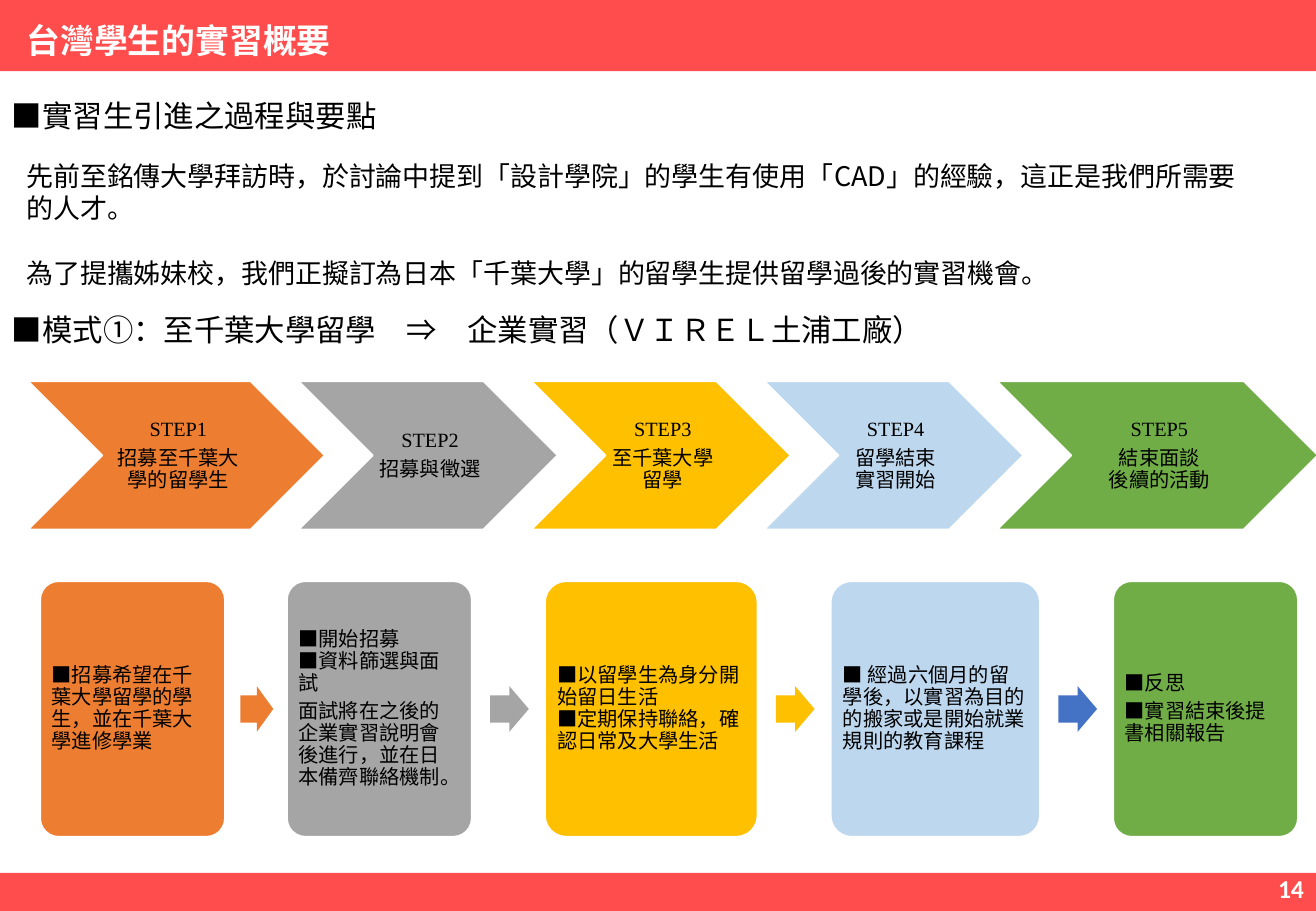
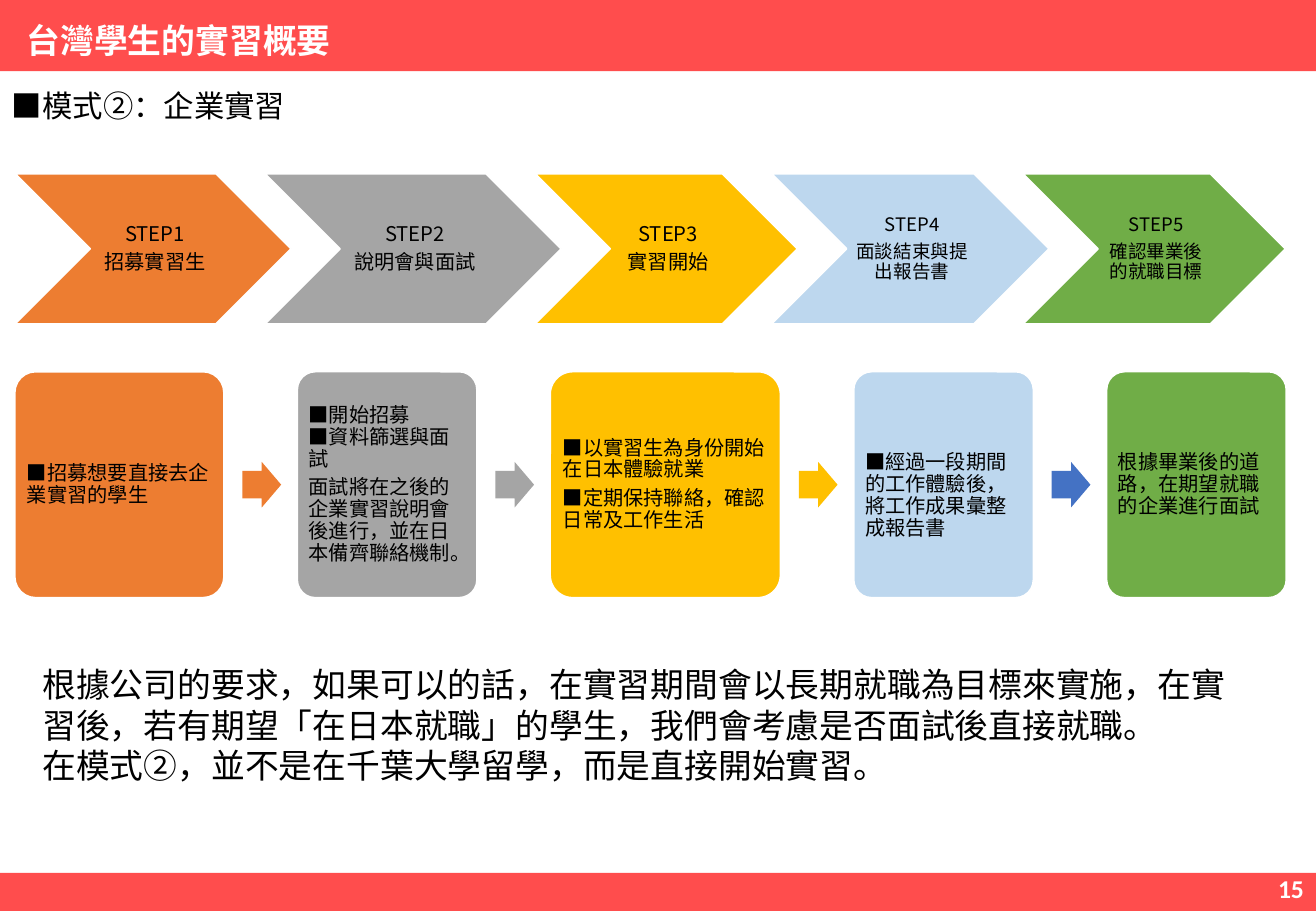
from dataclasses import dataclass
from typing import Any, NamedTuple

from lxml import etree
from pptx import Presentation
from pptx.dml.color import RGBColor
from pptx.enum.shapes import MSO_SHAPE
from pptx.enum.text import MSO_ANCHOR, PP_ALIGN
from pptx.oxml.ns import qn
from pptx.util import Pt

RECT, ROUND = MSO_SHAPE.RECTANGLE, MSO_SHAPE.ROUNDED_RECTANGLE
CHEVRON, ARROW = MSO_SHAPE.CHEVRON, MSO_SHAPE.RIGHT_ARROW
TOP, MIDDLE = MSO_ANCHOR.TOP, MSO_ANCHOR.MIDDLE
LEFT, CENTER, RIGHT = PP_ALIGN.LEFT, PP_ALIGN.CENTER, PP_ALIGN.RIGHT

BLACK = RGBColor(0x00, 0x00, 0x00)
WHITE = RGBColor(0xFF, 0xFF, 0xFF)
RED = RGBColor(0xFF, 0x4D, 0x4D)
ORANGE = RGBColor(0xED, 0x7D, 0x31)
GRAY = RGBColor(0xA5, 0xA5, 0xA5)
GOLD = RGBColor(0xFF, 0xC0, 0x00)
SKY = RGBColor(0xBD, 0xD7, 0xEE)
GREEN = RGBColor(0x70, 0xAD, 0x47)
BLUE = RGBColor(0x44, 0x72, 0xC4)
FILLS = (ORANGE, GRAY, GOLD, SKY, GREEN)
ARROWS = (ORANGE, GRAY, GOLD, BLUE)

JP, SC = "Noto Sans CJK JP", "Noto Sans CJK SC"
TIMES, CALIBRI = "Times New Roman", "Calibri"
WIDE, HIGH = 780, 540
OVERLAP = 15.4
GAP = 43.4


class Box(NamedTuple):
    left: float
    top: float
    width: float
    height: float


class Run(NamedTuple):
    text: str
    font: str = SC


Para = tuple[Run, ...]


@dataclass(frozen=True)
class Style:
    size: float = 12
    color: RGBColor = BLACK
    bold: bool = False
    align: Any = LEFT
    anchor: Any = TOP
    spacing: float = 1.0
    after: float = 0
    inset: tuple[float, float, float, float] = (7.2, 3.6, 7.2, 3.6)


@dataclass(frozen=True)
class Step:
    width: float
    text: str
    size: float = 12


@dataclass(frozen=True)
class Card:
    width: float
    paras: tuple[Para, ...]
    gap: float = GAP
    drop: float = 0


TITLE = Style(20, WHITE, True)
NUMBER = Style(15.2, WHITE, True, RIGHT, MIDDLE)
HEAD = Style(18)


def lines(*texts: str, font: str = SC) -> tuple[Para, ...]:
    """Make one paragraph of a single font from each text."""
    return tuple((Run(text, font),) for text in texts)


def assign(target: Any, values: dict[str, Any]) -> None:
    for name, value in values.items():
        setattr(target, name, value)


def write(shape: Any, paras: tuple[Para, ...], style: Style) -> None:
    frame = shape.text_frame
    sides = ("margin_left", "margin_top", "margin_right", "margin_bottom")
    assign(frame, {"word_wrap": True, "vertical_anchor": style.anchor}
           | {side: Pt(inset) for side, inset in zip(sides, style.inset)})
    for index, runs in enumerate(paras):
        para = frame.add_paragraph() if index else frame.paragraphs[0]
        last = index == len(paras) - 1
        assign(para, {"alignment": style.align, "line_spacing": style.spacing,
                      "space_after": Pt(0 if last else style.after)})
        for text, face in runs:
            for row, piece in enumerate(text.split("\n")):
                if row:
                    para.add_line_break()
                run = para.add_run()
                run.text = piece
                assign(run.font, {"name": face, "size": Pt(style.size),
                                  "bold": style.bold})
                run.font.color.rgb = style.color
                east = etree.SubElement(run.font._element, qn("a:ea"))
                east.set("typeface", SC if face == TIMES else face)


def label(slide: Any, box: Box, paras: tuple[Para, ...], style: Style) -> None:
    write(slide.shapes.add_textbox(*map(Pt, box)), paras, style)


def draw(slide: Any, kind: Any, box: Box, fill: RGBColor,
         edge: bool = False, adjust: tuple[float, ...] = ()) -> Any:
    """Add a flat preset shape, with a thin white edge if asked."""
    shape = slide.shapes.add_shape(kind, *map(Pt, box))
    shape.shadow.inherit = False
    shape.fill.solid()
    shape.fill.fore_color.rgb = fill
    if edge:
        shape.line.color.rgb = WHITE
        shape.line.width = Pt(1)
    else:
        shape.line.fill.background()
    for index, value in enumerate(adjust):
        shape.adjustments[index] = value
    return shape


def begin(deck: Any, number: int) -> Any:
    """Add a slide with the bands, title and page number."""
    slide = deck.slides.add_slide(deck.slide_layouts[6])
    draw(slide, RECT, Box(0, 0, WIDE, 42.2), RED)
    draw(slide, RECT, Box(0, 517.4, WIDE, HIGH - 517.4), RED)
    label(slide, Box(8.6, 8, 400, 32), lines("台灣學生的實習概要", font=JP), TITLE)
    label(slide, Box(604.4, 512, 175.6, 28.8),
          lines(str(number), font=CALIBRI), NUMBER)
    return slide


def chain(slide: Any, left: float, top: float, height: float,
          steps: tuple[Step, ...], font: str) -> None:
    """Draw the overlapping row of numbered chevrons."""
    for index, (step, fill) in enumerate(zip(steps, FILLS), 1):
        shape = draw(slide, CHEVRON, Box(left, top, step.width, height),
                     fill, True)
        style = Style(step.size, align=CENTER, anchor=MIDDLE, spacing=0.9,
                      after=4, inset=(3.6, 1.4, 1.4, 1.4))
        write(shape, lines(f"STEP{index}", step.text, font=font), style)
        left += step.width - OVERLAP


def flow(slide: Any, left: float, top: float, height: float,
         cards: tuple[Card, ...]) -> None:
    """Draw the row of cards with an arrow in each gap."""
    tall = 27
    for index, (card, fill) in enumerate(zip(cards, FILLS)):
        shape = draw(slide, ROUND, Box(left, top, card.width, height),
                     fill, True, (0.1,))
        style = Style(anchor=MIDDLE, spacing=0.9, after=4,
                      inset=(3.6, 3.6 + card.drop, 3.6, 3.6))
        write(shape, card.paras, style)
        left += card.width
        if index < len(ARROWS):
            box = Box(left + card.gap * 0.25, top + (height - tall) / 2,
                      card.gap * 0.53, tall)
            draw(slide, ARROW, box, ARROWS[index], adjust=(0.6, 0.5))
        left += card.gap


RECRUIT = lines("■開始招募\n■資料篩選與面試",
                "面試將在之後的企業實習說明會後進行，並在日本備齊聯絡機制。")

STUDY_STEPS = (
    Step(175.7, "招募至千葉大學的留學生"),
    Step(153.4, "招募與徵選"),
    Step(153.4, "至千葉大學留學"),
    Step(153.4, "留學結束\n實習開始"),
    Step(190, "結束面談\n後續的活動"),
)
STUDY_CARDS = (
    Card(109.5, ((Run("■", JP),
                  Run("招募希望在千葉大學留學的學生，並在千葉大學進修學業")),),
         gap=36.8),
    Card(109.5, RECRUIT),
    Card(126, lines("■以留學生為身分開始留日生活\n"
                    "■定期保持聯絡，確認日常及大學生活")),
    Card(124, lines("■ 經過六個月的留學後，以實習為目的的搬家"
                    "或是開始就業規則的教育課程")),
    Card(109.5, lines("■反思", "■實習結束後提書相關報告")),
)
WORK_STEPS = (
    Step(163.5, "招募實習生"),
    Step(175.5, "說明會與面試"),
    Step(155.5, "實習開始"),
    Step(164.5, "面談結束與提出報告書", 11),
    Step(155.5, "確認畢業後的就職目標", 11),
)
WORK_CARDS = (
    Card(124, lines("■招募想要直接去企業實習的學生", font=JP)),
    Card(106.5, RECRUIT),
    Card(136.5, ((Run("■以實習生為身份開始在日本體驗就業", JP),),
                 (Run("■定期保持聯絡，確認日常及工作生活"),))),
    Card(106.5, lines("■經過一段期間的工作體驗後，將工作成果彙整成報告書", font=JP),
         drop=13),
    Card(106.5, lines("根據畢業後的道路，在期望就職的企業進行面試", font=JP)),
)


def main() -> None:
    deck = Presentation()
    assign(deck, {"slide_width": Pt(WIDE), "slide_height": Pt(HIGH)})

    study = begin(deck, 14)
    label(study, Box(0, 54, 500, 30),
          ((Run("■", JP), Run("實習生引進之過程與要點")),), HEAD)
    label(study, Box(8.6, 91, 734.4, 104),
          lines("先前至銘傳大學拜訪時，於討論中提到「設計學院」的學生有使用"
                "「CAD」的經驗，這正是我們所需要的人才。",
                "為了提攜姊妹校，我們正擬訂為日本「千葉大學」的留學生提供"
                "留學過後的實習機會。"), Style(16, after=19))
    label(study, Box(0, 180.7, 700, 29),
          lines("■模式①：至千葉大學留學　⇒　企業實習（ＶＩＲＥＬ土浦工廠）",
                font=JP), HEAD)
    chain(study, 16.8, 226, 87.8, STUDY_STEPS, TIMES)
    flow(study, 23.8, 344.5, 151.5, STUDY_CARDS)

    work = begin(deck, 15)
    label(work, Box(0, 48.2, 500, 29), lines("■模式②：企業實習", font=JP), HEAD)
    chain(work, 9, 103, 89, WORK_STEPS, JP)
    flow(work, 8.8, 220.3, 134, WORK_CARDS)
    label(work, Box(18, 390.2, 734.4, 80),
          lines("根據公司的要求，如果可以的話，在實習期間會以長期就職為目標來"
                "實施，在實習後，若有期望「在日本就職」的學生，我們會考慮是否"
                "面試後直接就職。",
                "在模式②，並不是在千葉大學留學，而是直接開始實習。"), Style(20))
    deck.save("out.pptx")


if __name__ == "__main__":
    main()
